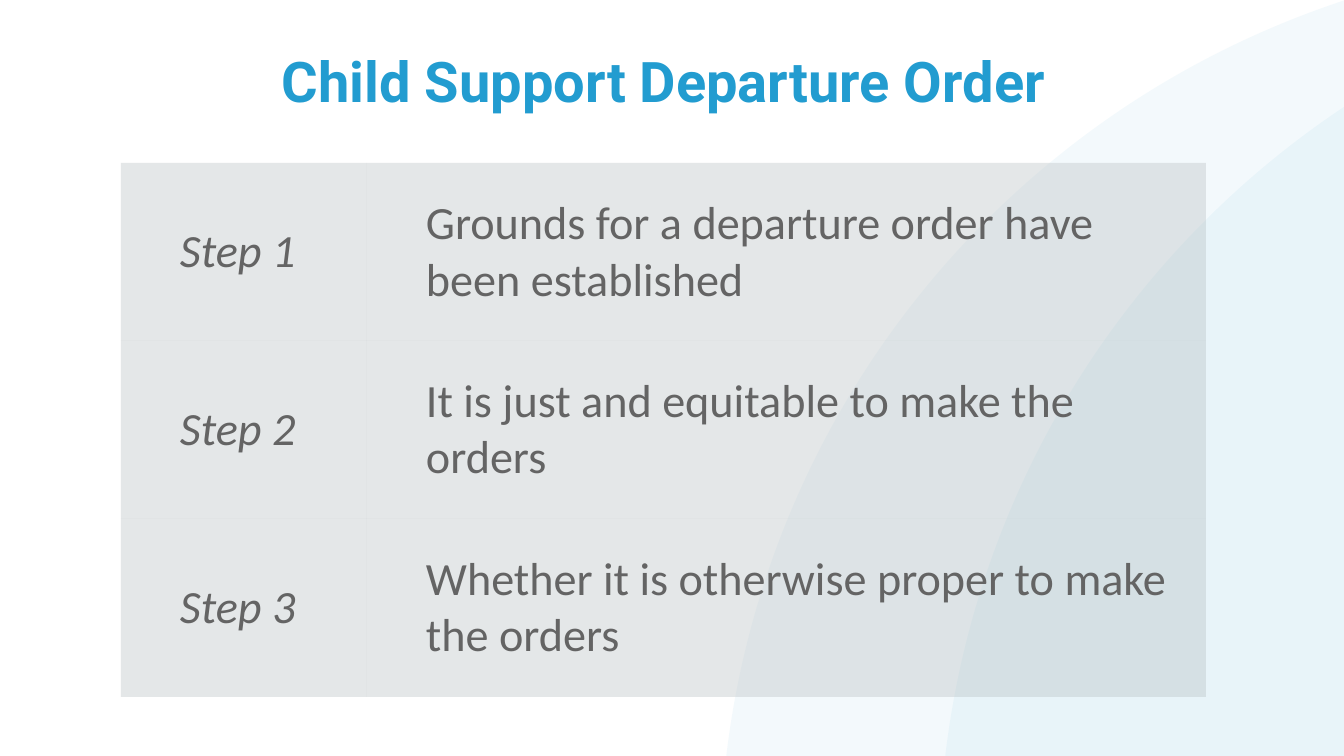
from lxml.etree import SubElement
from pptx import Presentation
from pptx.dml.color import RGBColor
from pptx.enum.shapes import MSO_SHAPE
from pptx.enum.text import MSO_ANCHOR, PP_ALIGN
from pptx.oxml.ns import qn
from pptx.util import Pt

EMU_PER_PX = 914400 / 100.8


def px(length):
    return round(length * EMU_PER_PX)


def color(value):
    return RGBColor.from_string(value)


class SlideBuilder:
    blue = "229CD0"
    gray = "646464"
    panel = "B4BCBE"
    title_font = "Roboto"
    body_font = "Calibri"

    def __init__(self, presentation):
        self.slide = presentation.slides.add_slide(presentation.slide_layouts[6])

    def paint(self, fill, element, value, opacity):
        fill.solid()
        fill.fore_color.rgb = color(value)
        for node in element.xpath(".//a:solidFill/a:srgbClr"):
            SubElement(node, qn("a:alpha"), val=str(opacity * 1000))

    def add_run(self, paragraph, text, font, size, value, bold=False, italic=False):
        run = paragraph.add_run()
        run.text = text
        run.font.name = font
        run.font.size = Pt(size)
        run.font.color.rgb = color(value)
        run.font.bold = bold
        run.font.italic = italic

    def add_circle(self, left, top, diameter):
        shape = self.slide.shapes.add_shape(
            MSO_SHAPE.OVAL, px(left), px(top), px(diameter), px(diameter)
        )
        shape.shadow.inherit = False
        shape.line.fill.background()
        self.paint(shape.fill, shape.element.spPr, self.blue, 5)

    def add_title(self, left, top, width, height, text):
        shape = self.slide.shapes.add_textbox(px(left), px(top), px(width), px(height))
        frame = shape.text_frame
        frame.word_wrap = True
        frame.vertical_anchor = MSO_ANCHOR.TOP
        paragraph = frame.paragraphs[0]
        paragraph.alignment = PP_ALIGN.CENTER
        paragraph.line_spacing = 0.9
        self.add_run(paragraph, text, self.title_font, 40, self.blue, bold=True)

    def clear_borders(self, properties):
        for index, side in enumerate(("lnL", "lnR", "lnT", "lnB")):
            border = SubElement(properties, qn(f"a:{side}"), w="0")
            SubElement(border, qn("a:noFill"))
            properties.insert(index, border)

    def fill_cell(self, cell, text, italic):
        cell.margin_left = px(59)
        cell.margin_right = cell.margin_top = cell.margin_bottom = px(31)
        cell.vertical_anchor = MSO_ANCHOR.MIDDLE
        properties = cell._tc.get_or_add_tcPr()
        self.paint(cell.fill, properties, self.panel, 35)
        self.clear_borders(properties)
        paragraph = cell.text_frame.paragraphs[0]
        self.add_run(paragraph, text, self.body_font, 33, self.gray, italic=italic)

    def add_steps(self, left, top, widths, row_height, steps):
        table = self.slide.shapes.add_table(
            len(steps), len(widths), px(left), px(top),
            px(sum(widths)), px(row_height * len(steps)),
        ).table
        table.first_row = False
        table.horz_banding = False
        for column, width in zip(table.columns, widths):
            column.width = px(width)
        for number, (row, step) in enumerate(zip(table.rows, steps), 1):
            row.height = px(row_height)
            self.fill_cell(row.cells[0], f"Step {number}", italic=True)
            self.fill_cell(row.cells[1], step, italic=False)


def main():
    presentation = Presentation()
    presentation.slide_width = px(1344)
    presentation.slide_height = px(756)
    builder = SlideBuilder(presentation)
    for left in (720, 939):
        builder.add_circle(left, -45, 1816)
    builder.add_title(78, 49, 1171, 98, "Child Support Departure Order")
    builder.add_steps(121, 163, (246, 839), 178, (
        "Grounds for a departure order have been established",
        "It is just and equitable to make the orders",
        "Whether it is otherwise proper to make the orders",
    ))
    presentation.save("out.pptx")


if __name__ == "__main__":
    main()
